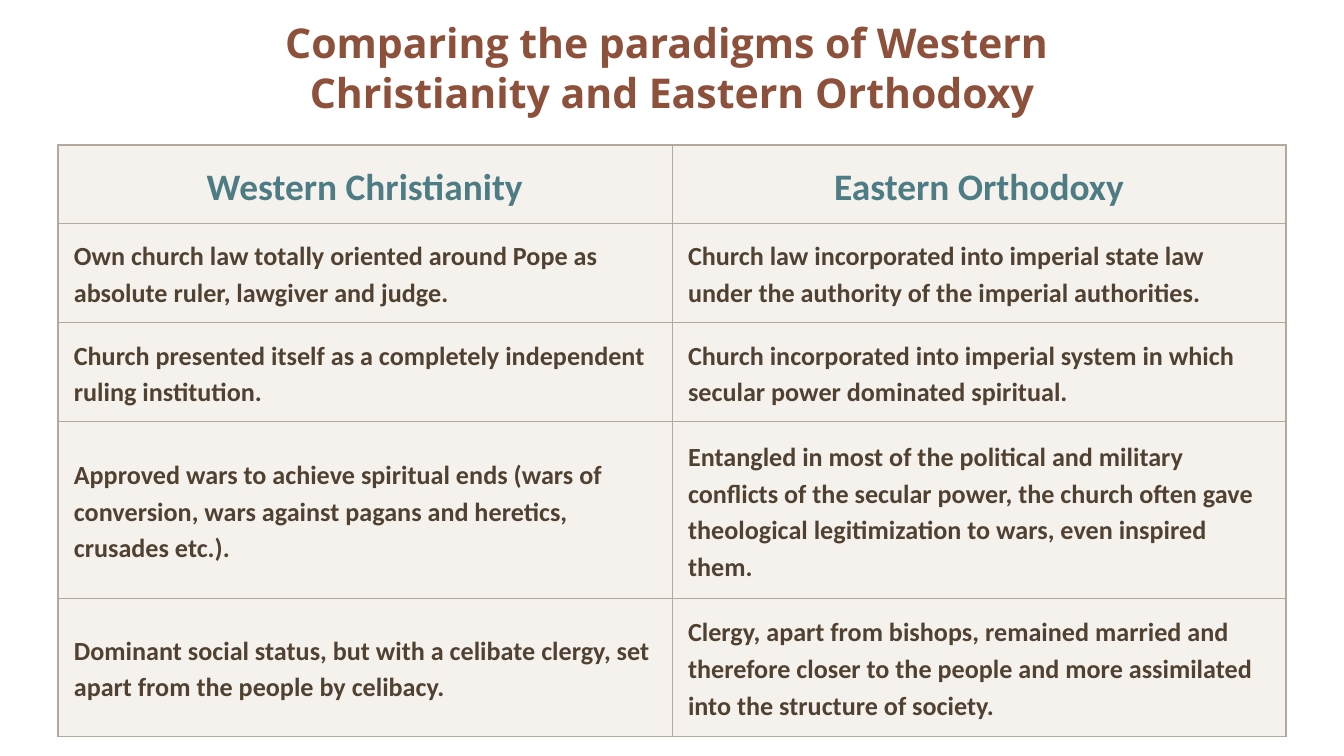
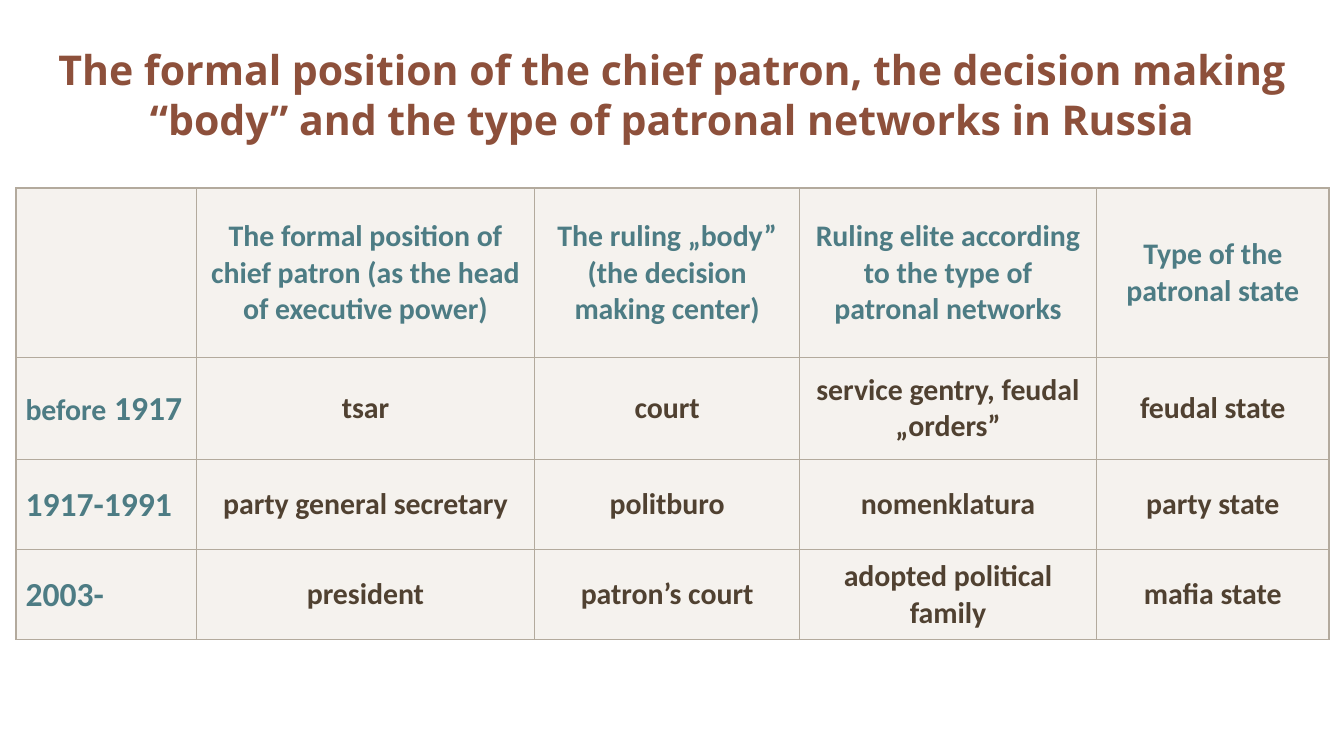
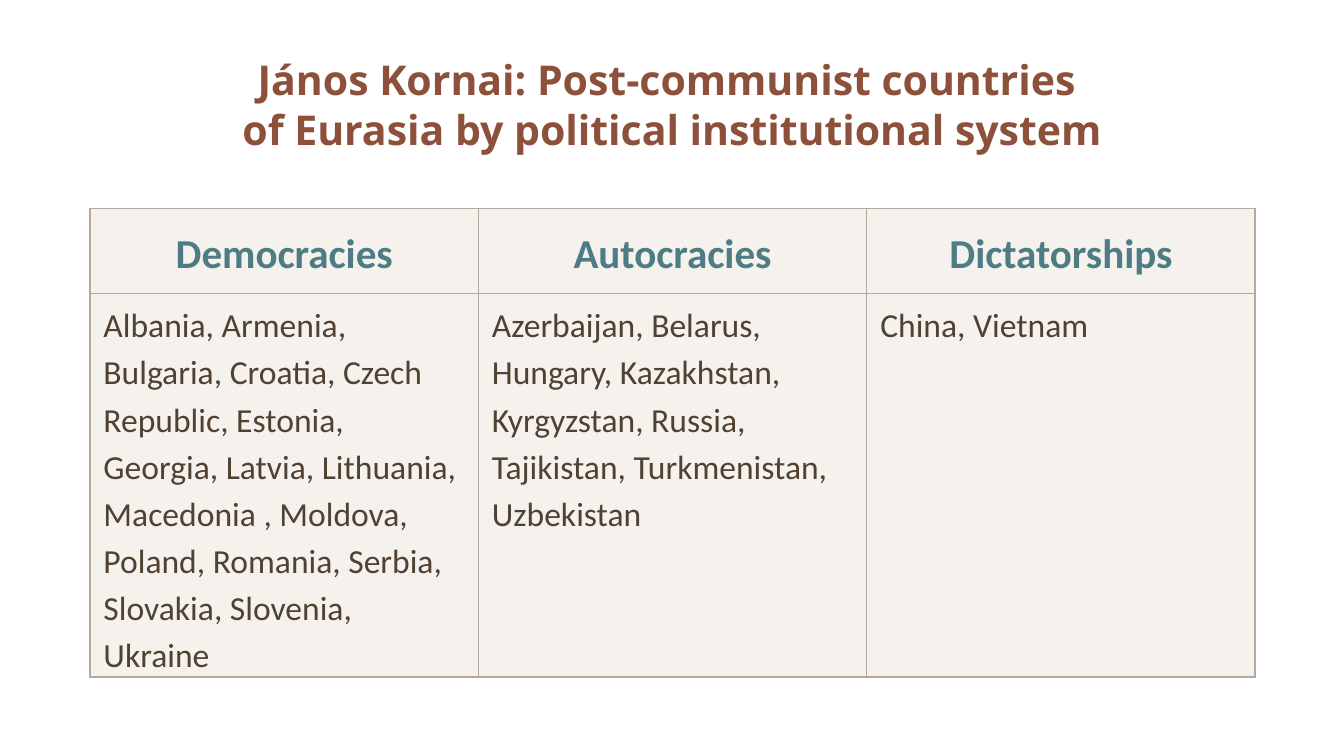
from lxml.etree import SubElement
from pptx import Presentation
from pptx.dml.color import RGBColor
from pptx.enum.text import MSO_ANCHOR, MSO_AUTO_SIZE, PP_ALIGN
from pptx.oxml import parse_xml
from pptx.oxml.ns import nsdecls, qn
from pptx.util import Inches, Pt

COLORS = {
    "title": "8D503B",
    "heading": "4D7C84",
    "body": "504131",
    "cell": "EFEAE4",
    "border": "B3AA9D",
}
TITLE_FONT = "Open Sans"
TABLE_FONT = "Calibri"
SLIDE_WIDTH = 10
SLIDE_HEIGHT = SLIDE_WIDTH * 9 / 16
TITLE_LEFT, TITLE_WIDTH = 0.12, 9.76
CELL_OPACITY = 60
OUTER_LINE, INNER_LINE = 1, 0.5

PARADIGMS = [
    ["Western Christianity", "Eastern Orthodoxy"],
    ["Own church law totally oriented around Pope as absolute ruler, lawgiver and judge.",
     "Church law incorporated into imperial state law under the authority of the imperial authorities."],
    ["Church presented itself as a completely independent ruling institution.",
     "Church incorporated into imperial system in which secular power dominated spiritual."],
    ["Approved wars to achieve spiritual ends (wars of conversion, wars against pagans and heretics, "
     "crusades etc.).",
     "Entangled in most of the political and military conflicts of the secular power, the church often "
     "gave theological legitimization to wars, even inspired them."],
    ["Dominant social status, but with a celibate clergy, set apart from the people by celibacy.",
     "Clergy, apart from bishops, remained married and therefore closer to the people and more "
     "assimilated into the structure of society."],
]

PATRONAL_HEADINGS = [
    "The formal position of chief patron (as the head of executive power)",
    "The ruling „body” (the decision making center)",
    "Ruling elite according to the type of patronal networks",
    "Type of the patronal state",
]
PATRONAL_PERIODS = [
    ([("before", 16), (" 1917", 18)],
     ["tsar", "court", "service gentry, feudal „orders”", "feudal state"]),
    ([("1917-1991", 18)],
     ["party general secretary", "politburo", "nomenklatura", "party state"]),
    ([("2003-", 18)],
     ["president", "patron’s court", "adopted political family", "mafia state"]),
]

POLITICAL_SYSTEMS = {
    "Democracies": "Albania, Armenia, Bulgaria, Croatia, Czech Republic, Estonia, Georgia, Latvia, "
                   "Lithuania, Macedonia , Moldova, Poland, Romania, Serbia, Slovakia, Slovenia, Ukraine",
    "Autocracies": "Azerbaijan, Belarus, Hungary, Kazakhstan, Kyrgyzstan, Russia, Tajikistan, "
                   "Turkmenistan, Uzbekistan",
    "Dictatorships": "China, Vietnam",
}


def add_run(paragraph, text, size, color, font_name=TABLE_FONT, bold=True):
    run = paragraph.add_run()
    run.text = text
    run.font.name = font_name
    run.font.size = Pt(size)
    run.font.bold = bold
    run.font.color.rgb = RGBColor.from_string(COLORS[color])


def add_titled_slide(presentation, lines, height):
    slide = presentation.slides.add_slide(presentation.slide_layouts[5])
    title = slide.shapes.title
    title.left, title.top = Inches(TITLE_LEFT), Inches(0)
    title.width, title.height = Inches(TITLE_WIDTH), Inches(height)
    frame = title.text_frame
    frame.word_wrap = True
    frame.auto_size = MSO_AUTO_SIZE.NONE
    frame.vertical_anchor = MSO_ANCHOR.MIDDLE
    paragraph = frame.paragraphs[0]
    paragraph.alignment = PP_ALIGN.CENTER
    for index, line in enumerate(lines):
        if index:
            paragraph.add_line_break()
        add_run(paragraph, line, 22, "title", TITLE_FONT)
    return slide


def style_cell(cell, outer_sides):
    cell.fill.solid()
    cell.fill.fore_color.rgb = RGBColor.from_string(COLORS["cell"])
    properties = cell._tc.get_or_add_tcPr()
    fill_color = properties.find(f"{qn('a:solidFill')}/{qn('a:srgbClr')}")
    SubElement(fill_color, qn("a:alpha")).set("val", str(CELL_OPACITY * 1000))
    for index, side in enumerate("LRTB"):
        width = Pt(OUTER_LINE if side in outer_sides else INNER_LINE)
        properties.insert(index, parse_xml(
            f'<a:ln{side} {nsdecls("a")} w="{width}"><a:solidFill>'
            f'<a:srgbClr val="{COLORS["border"]}"/></a:solidFill></a:ln{side}>'))


def add_grid(slide, left, top, column_widths, row_heights):
    row_count, column_count = len(row_heights), len(column_widths)
    table = slide.shapes.add_table(
        row_count, column_count, Inches(left), Inches(top),
        Inches(sum(column_widths)), Inches(sum(row_heights))).table
    table.first_row = False
    table.horz_banding = False
    for column, width in zip(table.columns, column_widths):
        column.width = Inches(width)
    for row, height in zip(table.rows, row_heights):
        row.height = Inches(height)
    for row in range(row_count):
        for column in range(column_count):
            edges = {"L": column == 0, "R": column == column_count - 1,
                     "T": row == 0, "B": row == row_count - 1}
            style_cell(table.cell(row, column), [side for side in edges if edges[side]])
    return table


def write_cell(cell, runs, color, alignment=PP_ALIGN.CENTER, margins=(0.07, 0, 0),
               anchor=MSO_ANCHOR.MIDDLE, line_spacing=1.0, bold=True):
    side_margin, top_margin, bottom_margin = margins
    cell.margin_left = cell.margin_right = Inches(side_margin)
    cell.margin_top = Inches(top_margin)
    cell.margin_bottom = Inches(bottom_margin)
    cell.vertical_anchor = anchor
    paragraph = cell.text_frame.paragraphs[0]
    paragraph.alignment = alignment
    paragraph.line_spacing = line_spacing
    for text, size in runs:
        add_run(paragraph, text, size, color, bold=bold)


def build_paradigms(presentation):
    slide = add_titled_slide(
        presentation,
        ["Comparing the paradigms of Western ", "Christianity and Eastern Orthodoxy"], 1)
    table = add_grid(slide, 0.43, 1.08, [4.57] * 2, [0.58, 0.74, 0.74, 1.31, 1.03])
    for row, texts in enumerate(PARADIGMS):
        size, color, alignment = ((14, "body", PP_ALIGN.LEFT) if row
                                  else (20, "heading", PP_ALIGN.CENTER))
        for column, text in enumerate(texts):
            write_cell(table.cell(row, column), [(text, size)], color, alignment,
                       margins=(0.12, 0.08, 0.08), line_spacing=1.15)


def build_patronal_networks(presentation):
    slide = add_titled_slide(
        presentation,
        ["The formal position of the chief patron, the decision making “body” "
         "and the type of patronal networks in Russia"], 1.4)
    table = add_grid(slide, 0.12, 1.4, [1.34, 2.52, 1.97, 2.21, 1.73],
                     [1.26, 0.76, 0.67, 0.67])
    for column, heading in enumerate(PATRONAL_HEADINGS, 1):
        write_cell(table.cell(0, column), [(heading, 16)], "heading")
    for row, (period_runs, entries) in enumerate(PATRONAL_PERIODS, 1):
        write_cell(table.cell(row, 0), period_runs, "heading", PP_ALIGN.JUSTIFY)
        for column, entry in enumerate(entries, 1):
            write_cell(table.cell(row, column), [(entry, 16)], "body")


def build_political_systems(presentation):
    slide = add_titled_slide(
        presentation,
        ["János Kornai: Post-communist countries ",
         "of Eurasia by political institutional system"], 1.55)
    table = add_grid(slide, 0.67, 1.55, [2.89] * 3, [0.63, 2.84])
    for column, (system, countries) in enumerate(POLITICAL_SYSTEMS.items()):
        write_cell(table.cell(0, column), [(system, 22)], "heading", line_spacing=1.15)
        write_cell(table.cell(1, column), [(countries, 18)], "body", PP_ALIGN.LEFT,
                   margins=(0.1, 0.05, 0), anchor=MSO_ANCHOR.TOP, line_spacing=1.15, bold=False)


def main():
    presentation = Presentation()
    presentation.slide_width = Inches(SLIDE_WIDTH)
    presentation.slide_height = Inches(SLIDE_HEIGHT)
    build_paradigms(presentation)
    build_patronal_networks(presentation)
    build_political_systems(presentation)
    presentation.save("out.pptx")


if __name__ == "__main__":
    main()
